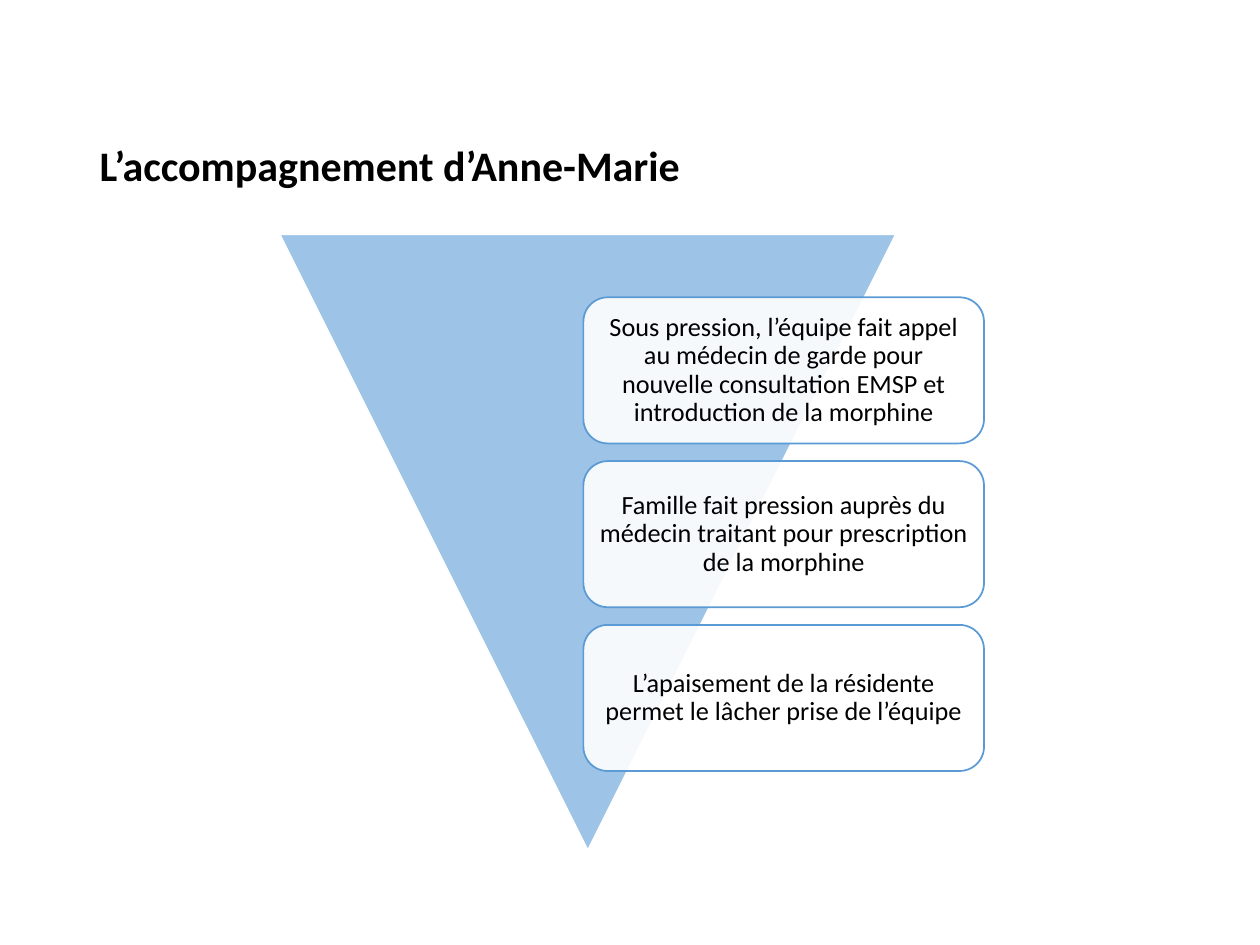
import pptx
import pptx.util
import pptx.dml.color
import pptx.enum.shapes
import pptx.enum.text
import pptx.oxml.ns
from lxml import etree

Inches = pptx.util.Inches
Pt = pptx.util.Pt
SHAPES = pptx.enum.shapes.MSO_SHAPE
ALIGN = pptx.enum.text.PP_ALIGN
ANCHOR = pptx.enum.text.MSO_ANCHOR

TITLE = "L’accompagnement d’Anne-Marie"
STEPS = [
    "Sous pression, l’équipe fait appel au médecin de garde pour nouvelle consultation EMSP et introduction de la morphine",
    "Famille fait pression auprès du médecin traitant pour prescription de la morphine",
    "L’apaisement de la résidente permet le lâcher prise de l’équipe",
]
COLORS = {"white": "FFFFFF", "black": "000000", "triangle": "9DC3E6", "border": "5B9BD5"}
FONT = "Calibri"
CARD_LEFT, CARD_TOP, CARD_WIDTH, CARD_HEIGHT = 4.63, 2.36, 3.18, 1.16
CARD_PITCH = 1.3
CARD_INSET = 0.06
CARD_OPACITY = 90


def color(name):
    return pptx.dml.color.RGBColor.from_string(COLORS[name])


def write(text_frame, text, size, alignment, bold=False):
    text_frame.text = text
    text_frame.word_wrap = True
    paragraph = text_frame.paragraphs[0]
    paragraph.alignment = alignment
    paragraph.line_spacing = 0.9
    font = paragraph.runs[0].font
    font.name, font.size, font.bold = FONT, Pt(size), bold
    font.color.rgb = color("black")


def add_shape(slide, kind, box, fill, line):
    shape = slide.shapes.add_shape(kind, *map(Inches, box))
    shape.shadow.inherit = False
    shape.fill.solid()
    shape.fill.fore_color.rgb = color(fill)
    shape.line.color.rgb = color(line)
    shape.line.width = Pt(1)
    return shape


def set_opacity(shape, percent):
    qn = pptx.oxml.ns.qn
    fill_color = shape.fill._xPr.find(qn("a:solidFill")).find(qn("a:srgbClr"))
    etree.SubElement(fill_color, qn("a:alpha")).set("val", str(percent * 1000))


def add_card(slide, index, text):
    box = (CARD_LEFT, CARD_TOP + index * CARD_PITCH, CARD_WIDTH, CARD_HEIGHT)
    card = add_shape(slide, SHAPES.ROUNDED_RECTANGLE, box, "white", "border")
    set_opacity(card, CARD_OPACITY)
    frame = card.text_frame
    frame.margin_left = frame.margin_right = Inches(CARD_INSET)
    frame.margin_top = frame.margin_bottom = Inches(CARD_INSET)
    frame.vertical_anchor = ANCHOR.MIDDLE
    write(frame, text, 15, ALIGN.CENTER)


def main():
    presentation = pptx.Presentation()
    presentation.slide_width, presentation.slide_height = Inches(10), Inches(7.5)
    slide = presentation.slides.add_slide(presentation.slide_layouts[5])

    title = slide.shapes.title
    title.left, title.top, title.width, title.height = map(Inches, (0.69, 1.1, 8.62, 0.55))
    title.text_frame.vertical_anchor = ANCHOR.TOP
    write(title.text_frame, TITLE, 24, ALIGN.LEFT, bold=True)

    triangle = add_shape(slide, SHAPES.ISOSCELES_TRIANGLE, (2.22, 1.86, 4.89, 4.89), "triangle", "white")
    triangle.rotation = 180

    for index, text in enumerate(STEPS):
        add_card(slide, index, text)

    presentation.save("out.pptx")


if __name__ == "__main__":
    main()
